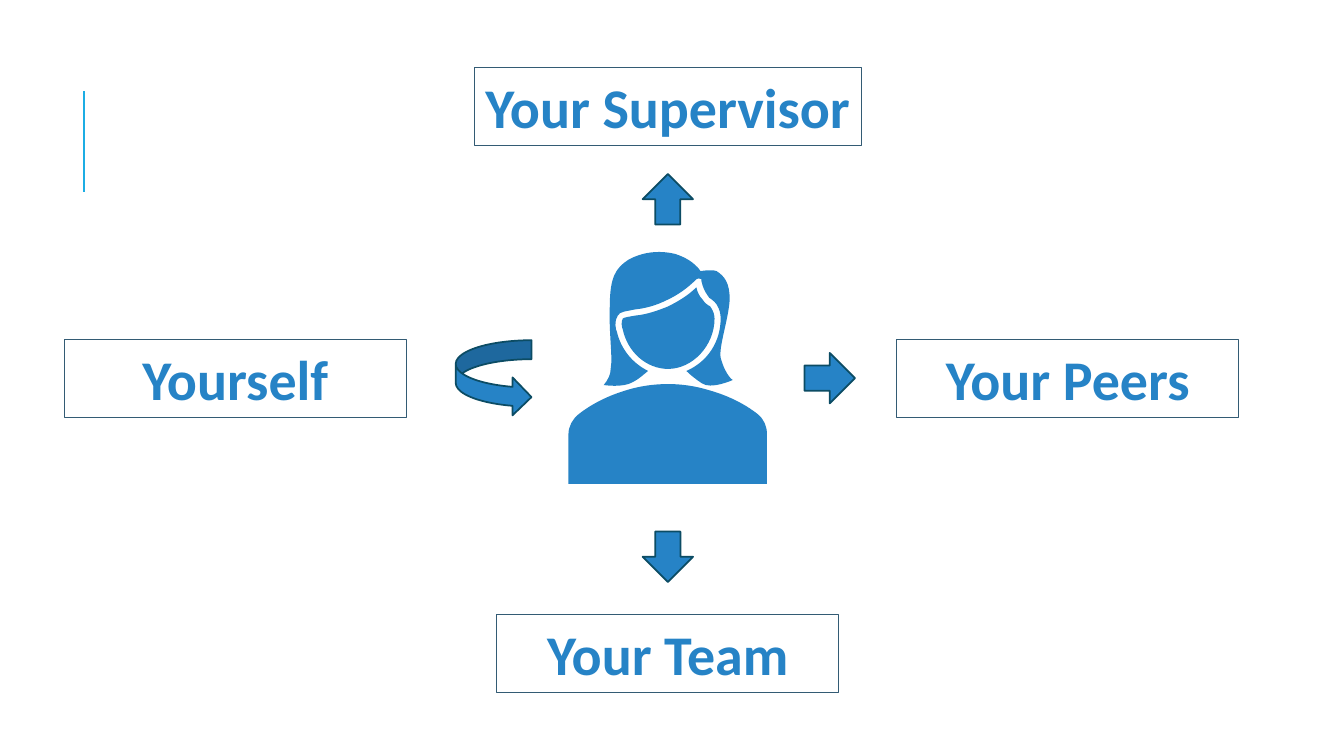
from lxml import etree
from pptx import Presentation
from pptx.dml.color import RGBColor
from pptx.enum.shapes import MSO_CONNECTOR, MSO_SHAPE
from pptx.enum.text import MSO_AUTO_SIZE, PP_ALIGN
from pptx.oxml.ns import qn
from pptx.util import Cm, Pt

STRAIGHT = MSO_CONNECTOR.STRAIGHT
UP_ARROW = MSO_SHAPE.UP_ARROW
CURVED_ARROW = MSO_SHAPE.CURVED_RIGHT_ARROW
CENTER = PP_ALIGN.CENTER
FIT_SHAPE = MSO_AUTO_SIZE.SHAPE_TO_FIT_TEXT

COLORS = {
    "blue": "2683C6",
    "arrow_edge": "0C4C64",
    "box_edge": "335B74",
    "accent": "1CADE4",
}
UNIT = Cm(2.54) / 100
HUB_X, HUB_Y = 16.83, 9.53

SHOULDERS = [
    (761, 431), (761, 423), (758, 416), (752, 411), (738, 400), (721, 392),
    (703, 387), (690, 383), (676, 381), (663, 381), (649, 381), (635, 383),
    (622, 387), (605, 392), (588, 400), (574, 411), (568, 416), (564, 423),
    (564, 431),
]
SHOULDER_CORNERS = [(564, 480), (761, 480)]
HAIR = [
    (715, 355), (713, 344), (723, 316), (724, 297), (724, 281), (719, 274),
    (711, 269), (706, 267), (695, 269), (695, 269), (695, 269), (689, 258),
    (670, 252), (654, 248), (637, 250), (623, 258), (611, 266), (605, 275),
    (605, 304), (604, 330), (608, 354), (606, 365), (606, 372), (603, 377),
    (599, 382), (599, 382), (618, 385), (628, 379), (634, 376), (638, 372),
    (643, 368), (627, 360), (616, 346), (612, 329), (611, 328), (609, 318),
    (613, 313), (615, 309), (621, 309), (630, 307), (640, 306), (651, 303),
    (661, 298), (672, 293), (682, 286), (691, 277), (692, 276), (694, 276),
    (696, 277), (696, 278), (696, 278), (696, 279), (697, 284), (699, 289),
    (702, 293), (703, 295), (704, 296), (706, 297), (708, 299), (710, 300),
    (711, 302), (714, 307), (715, 311), (715, 316), (715, 339), (702, 359),
    (681, 368), (685, 372), (690, 376), (696, 380), (705, 387), (727, 377),
    (727, 377), (727, 377), (720, 373), (715, 355),
]
FACE = [
    (709, 316), (709, 313), (708, 309), (706, 306), (705, 304), (704, 303),
    (703, 303), (700, 301), (698, 299), (697, 297), (694, 294), (692, 290),
    (691, 285), (683, 293), (673, 299), (663, 304), (653, 308), (642, 312),
    (631, 313), (625, 314), (619, 315), (618, 316), (616, 319), (617, 325),
    (618, 327), (623, 350), (642, 366), (663, 366), (687, 366), (709, 343),
    (709, 316),
]


class Canvas:
    font = "Calibri"
    font_size = Pt(40)

    def __init__(self, slide):
        self.shapes = slide.shapes

    def color(self, name):
        return RGBColor.from_string(COLORS[name])

    def fill(self, sp, name):
        sp.shadow.inherit = False
        sp.fill.solid()
        sp.fill.fore_color.rgb = self.color(name)

    def stroke(self, sp, name, width):
        sp.line.color.rgb = self.color(name)
        sp.line.width = Pt(width)

    def rule(self, x, top, bottom):
        line = self.shapes.add_connector(STRAIGHT, Cm(x), Cm(bottom), Cm(x), Cm(top))
        self.stroke(line, "accent", 1.5)
        etree.SubElement(line._element.spPr, qn("a:effectLst"))

    def outline(self, curve, corners=()):
        points = curve + list(corners)
        builder = self.shapes.build_freeform(*points[0], scale=UNIT)
        builder.add_line_segments(points[1:], close=True)
        sp = builder.convert_to_shape()
        self.bend(sp, len(curve) - 1)
        self.fill(sp, "blue")
        sp.line.fill.background()

    def bend(self, sp, count):
        lines = list(sp._element.iter(qn("a:lnTo")))[:count]
        for i in range(0, count, 3):
            bezier = etree.Element(qn("a:cubicBezTo"))
            lines[i].addprevious(bezier)
            for line in lines[i:i + 3]:
                bezier.append(line[0])
                line.getparent().remove(line)

    def arrow(self, kind, x, y, size=1.27, rotation=0):
        sp = self.shapes.add_shape(
            kind, Cm(x - size / 2), Cm(y - size / 2), Cm(size), Cm(size))
        sp.rotation = rotation
        self.fill(sp, "blue")
        self.stroke(sp, "arrow_edge", 1.25)

    def label(self, text, x, y, width=8.61, height=1.96):
        sp = self.shapes.add_textbox(
            Cm(x - width / 2), Cm(y - height / 2), Cm(width), Cm(height))
        self.stroke(sp, "box_edge", 0.75)
        tf = sp.text_frame
        tf.word_wrap = True
        tf.auto_size = FIT_SHAPE
        p = tf.paragraphs[0]
        p.text = text
        p.alignment = CENTER
        p.font.name = self.font
        p.font.size = self.font_size
        p.font.bold = True
        p.font.color.rgb = self.color("blue")


def main():
    prs = Presentation()
    prs.slide_width, prs.slide_height = Cm(33.87), Cm(19.05)
    s = prs.slides.add_slide(prs.slide_layouts[6])
    canvas = Canvas(s)

    canvas.rule(2.11, 2.29, 4.83)
    canvas.outline(SHOULDERS, SHOULDER_CORNERS)
    canvas.outline(HAIR)
    canvas.outline(FACE)

    canvas.arrow(CURVED_ARROW, 12.44, HUB_Y, size=1.91)
    canvas.arrow(UP_ARROW, HUB_X, 5.02)
    canvas.arrow(UP_ARROW, 20.91, HUB_Y, rotation=90)
    canvas.arrow(UP_ARROW, HUB_X, 14.03, rotation=180)

    canvas.label("Your Supervisor", HUB_X, 2.68, width=9.75)
    canvas.label("Your Peers", 26.91, 9.54)
    canvas.label("Yourself", 5.93, 9.54)
    canvas.label("Your Team", HUB_X, 16.47)

    prs.save("out.pptx")


if __name__ == "__main__":
    main()
